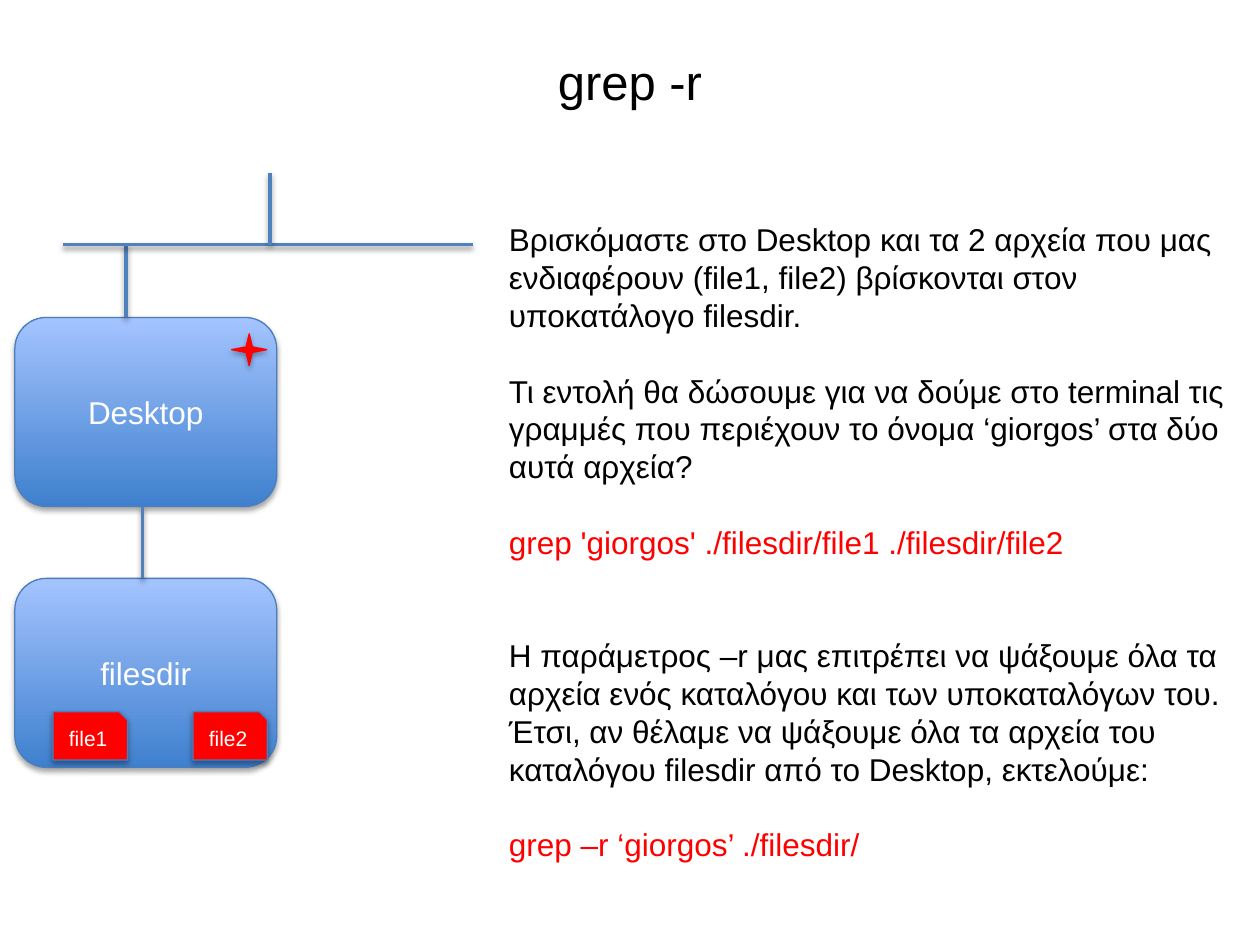
"""Build the "grep -r" slide: a directory tree beside the explained commands."""
from dataclasses import dataclass

from lxml.etree import SubElement
from pptx import Presentation
from pptx.dml.color import RGBColor
from pptx.enum.shapes import MSO_CONNECTOR as CONN, MSO_SHAPE as SHAPE
from pptx.enum.text import MSO_ANCHOR as ANCHOR, PP_ALIGN as ALIGN
from pptx.oxml.ns import qn
from pptx.util import Cm, Pt

BLUE, EDGE, RED = "4F81BD", "4B7EBC", "FF0000"
BLACK, WHITE = "000000", "FFFFFF"
GRADIENT = ("3F80CE", "A4C4FF")
LINE = 21.6


@dataclass
class Node:
    kind: SHAPE
    x: float
    y: float
    w: float
    h: float
    text: str = ""
    size: int = 18
    edge: str = EDGE
    fill: str = RED


@dataclass
class Branch:
    x1: float
    y1: float
    x2: float
    y2: float


@dataclass
class Para:
    text: str
    color: str = BLACK
    gap: int = 1


BAR_Y, DESK_Y, DIR_Y, BOX_H = 4.93, 6.4, 11.66, 3.81
BRANCHES = [
    Branch(2.54, BAR_Y, 2.54, DESK_Y),
    Branch(1.27, BAR_Y, 9.53, BAR_Y),
    Branch(5.44, 3.48, 5.44, BAR_Y),
    Branch(2.87, DESK_Y + BOX_H, 2.87, DIR_Y),
]
FOLDERS = [
    Node(SHAPE.ROUNDED_RECTANGLE, 0.3, y, 5.28, BOX_H, name, fill="")
    for name, y in (("Desktop", DESK_Y), ("filesdir", DIR_Y))
]
MARKS = [Node(SHAPE.STAR_4_POINT, 4.67, 6.73, 0.71, 0.64, edge=RED)] + [
    Node(SHAPE.SNIP_1_RECTANGLE, x, 14.35, 1.5, 0.97, name, 12)
    for name, x in (("file1", 1.07), ("file2", 3.89))
]
PARAS = [
    Para("Βρισκόμαστε στο Desktop και τα 2 αρχεία που μας ενδιαφέρουν "
         "(file1, file2) βρίσκονται στον υποκατάλογο filesdir.", gap=0),
    Para("Τι εντολή θα δώσουμε για να δούμε στο terminal τις γραμμές που "
         "περιέχουν το όνομα ‘giorgos’ στα δύο αυτά αρχεία?"),
    Para("grep 'giorgos' ./filesdir/file1 ./filesdir/file2", RED),
    Para("Η παράμετρος –r μας επιτρέπει να ψάξουμε όλα τα αρχεία ενός "
         "καταλόγου και των υποκαταλόγων του.", gap=2),
    Para("Έτσι, αν θέλαμε να ψάξουμε όλα τα αρχεία του καταλόγου filesdir "
         "από το Desktop, εκτελούμε:", gap=0),
    Para("grep –r ‘giorgos’ ./filesdir/", RED),
]


def rgb(value: str) -> RGBColor:
    return RGBColor.from_string(value)


def add_shadow(sp, dist: float, alpha: int) -> None:
    effects = SubElement(sp._element.spPr, qn("a:effectLst"))
    shadow = SubElement(effects, qn("a:outerShdw"), blurRad=str(Pt(3.1)),
                        dist=str(Pt(dist)), dir="5400000", rotWithShape="0")
    color = SubElement(shadow, qn("a:srgbClr"), val=BLACK)
    SubElement(color, qn("a:alpha"), val=str(alpha * 1000))


def write(p, text: str, size: int, color: str, **layout) -> None:
    for key, value in layout.items():
        setattr(p, key, value)
    r = p.add_run()
    r.text = text
    for key, value in {"name": "Arial", "size": Pt(size)}.items():
        setattr(r.font, key, value)
    r.font.color.rgb = rgb(color)


def draw_node(s, n: Node) -> None:
    sp = s.shapes.add_shape(n.kind, Cm(n.x), Cm(n.y), Cm(n.w), Cm(n.h))
    if n.fill:
        sp.fill.solid()
        sp.fill.fore_color.rgb = rgb(n.fill)
    else:
        sp.fill.gradient()
        sp.fill.gradient_angle = 90
        for stop, color in zip(sp.fill.gradient_stops, GRADIENT):
            stop.color.rgb = rgb(color)
    sp.line.color.rgb = rgb(n.edge)
    sp.line.width = Pt(0.75)
    add_shadow(sp, 1.8, 35)
    if n.text:
        tf = sp.text_frame
        tf.vertical_anchor = ANCHOR.MIDDLE
        write(tf.paragraphs[0], n.text, n.size, WHITE, alignment=ALIGN.CENTER)


def draw_branch(s, b: Branch) -> None:
    sp = s.shapes.add_connector(CONN.STRAIGHT, Cm(b.x1), Cm(b.y1), Cm(b.x2), Cm(b.y2))
    sp.line.color.rgb = rgb(BLUE)
    sp.line.width = Pt(2)
    add_shadow(sp, 1.6, 38)


def add_text(s, x: float, y: float, w: float, h: float):
    tf = s.shapes.add_textbox(Cm(x), Cm(y), Cm(w), Cm(h)).text_frame
    tf.word_wrap = True
    return tf


def main() -> None:
    prs = Presentation()
    prs.slide_width, prs.slide_height = Cm(25.4), Cm(19.05)
    s = prs.slides.add_slide(prs.slide_layouts[6])

    for n in FOLDERS:
        draw_node(s, n)
    for b in BRANCHES:
        draw_branch(s, b)
    for n in MARKS:
        draw_node(s, n)

    tf = add_text(s, 1.27, 0.76, 22.86, 1.73)
    tf.vertical_anchor = ANCHOR.MIDDLE
    write(tf.paragraphs[0], "grep -r", 28, BLACK, alignment=ALIGN.CENTER)

    tf = add_text(s, 10.01, 4.32, 14.99, 13.34)
    for i, para in enumerate(PARAS):
        p = tf.add_paragraph() if i else tf.paragraphs[0]
        write(p, para.text, 18, para.color,
              line_spacing=Pt(LINE), space_before=Pt(LINE * para.gap))

    prs.save("out.pptx")


if __name__ == "__main__":
    main()
